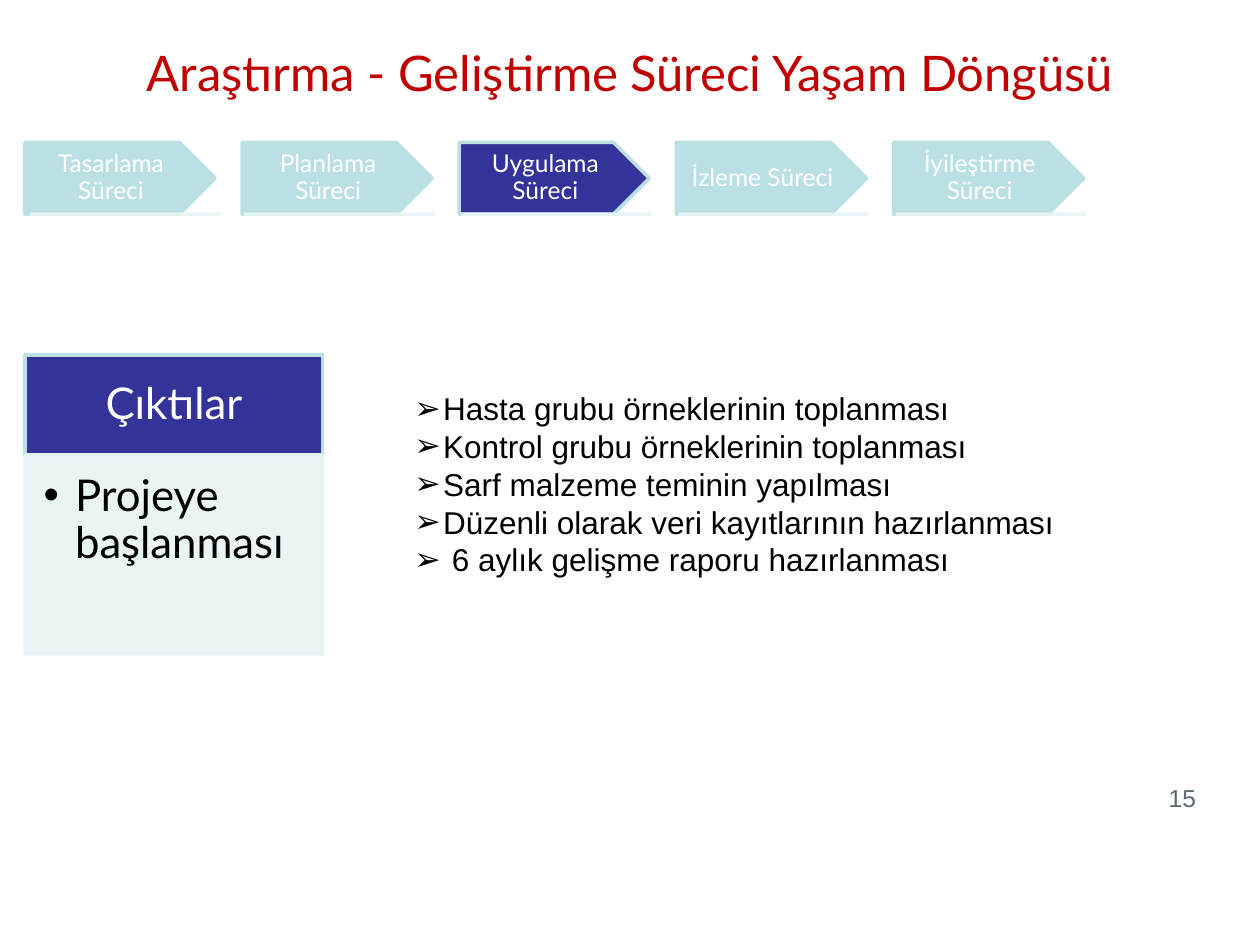
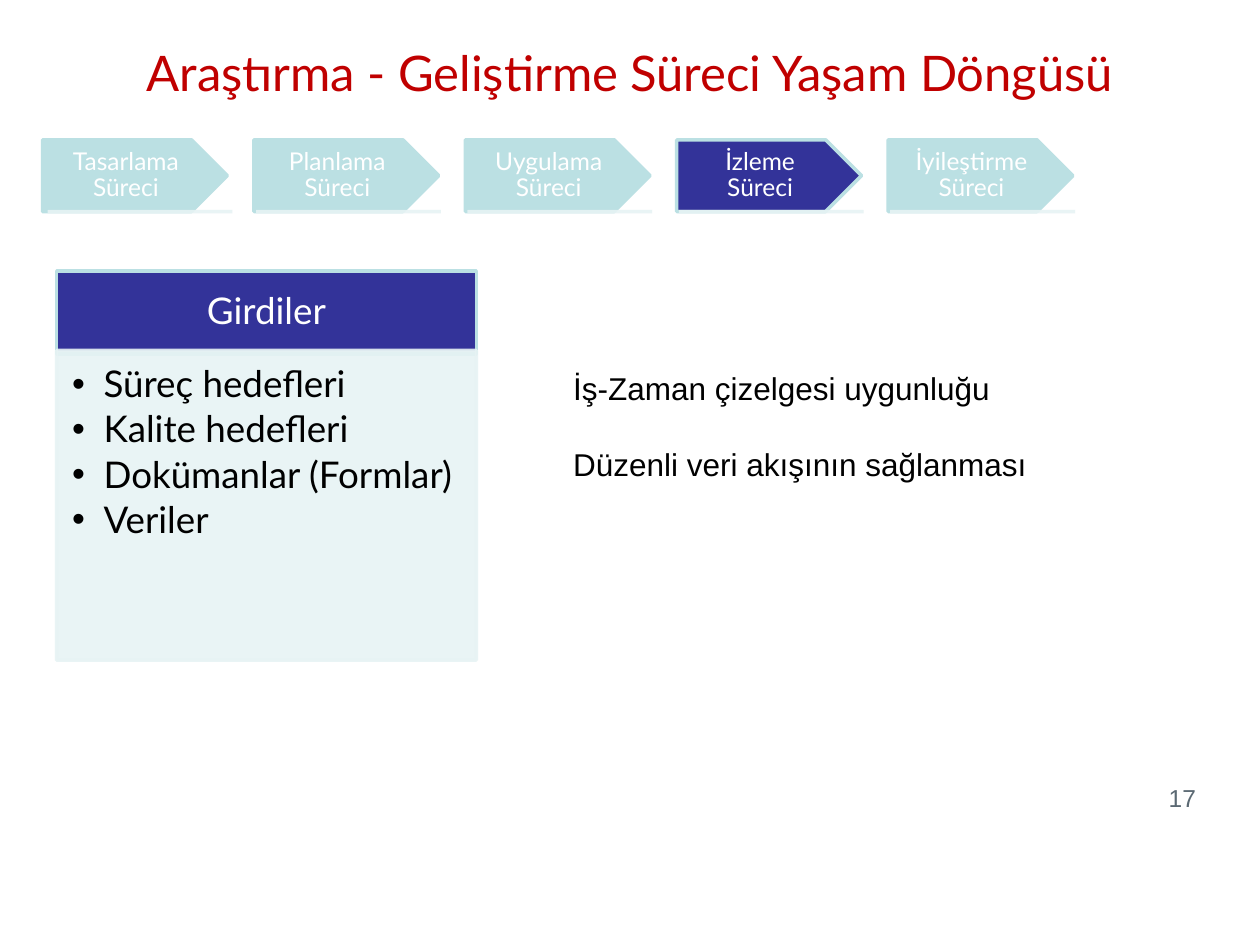
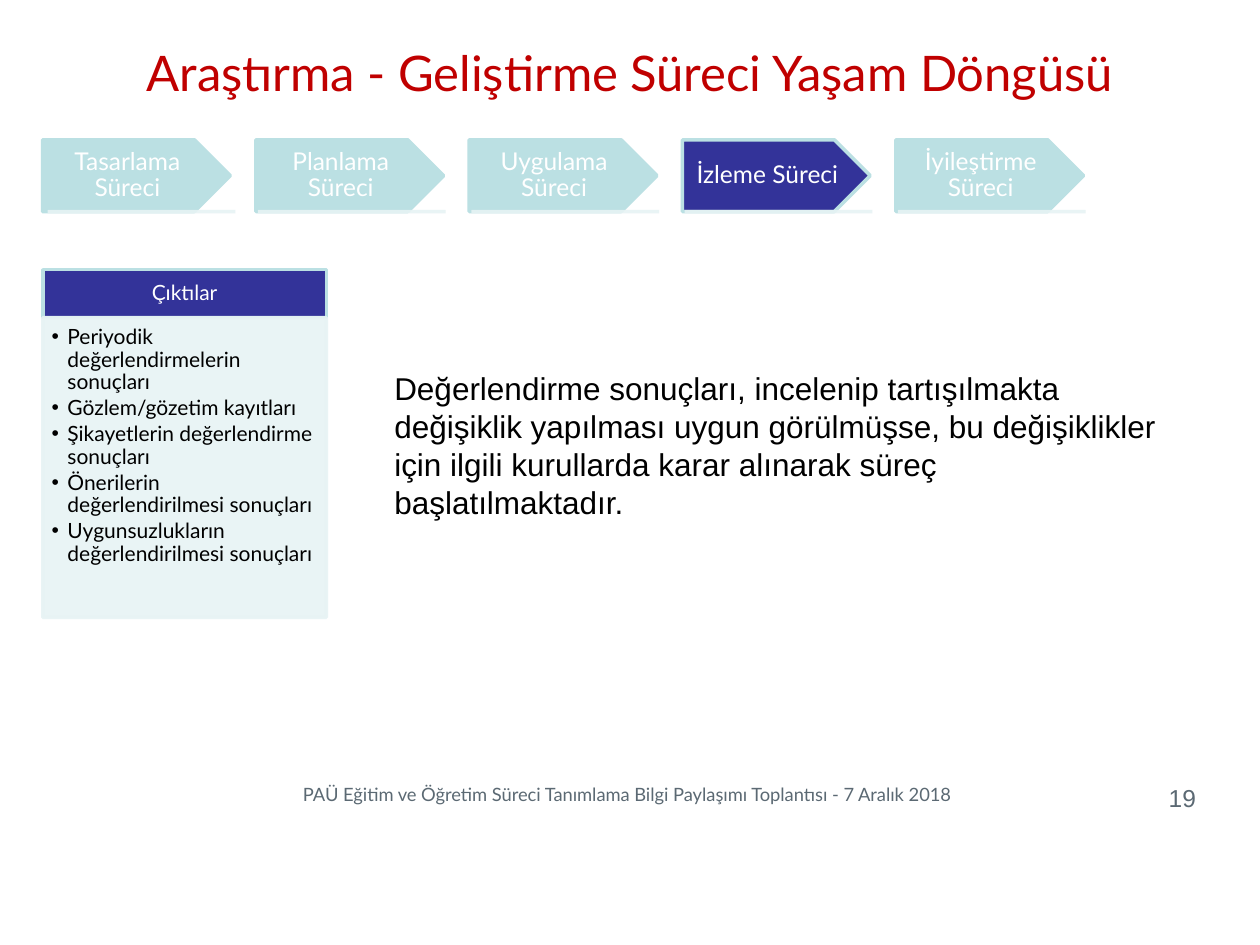
from lxml import etree
from pptx import Presentation
from pptx.dml.color import RGBColor
from pptx.enum.shapes import MSO_CONNECTOR, MSO_SHAPE
from pptx.enum.text import MSO_ANCHOR, PP_ALIGN
from pptx.oxml.ns import qn
from pptx.util import Pt

RED = RGBColor(0xC0, 0x00, 0x00)
NAVY = RGBColor(0x33, 0x33, 0x99)
TEAL = RGBColor(0xBB, 0xE0, 0xE3)
PALE = RGBColor(0xE7, 0xF3, 0xF4)
GRAY = RGBColor(0x5B, 0x69, 0x73)
WHITE = RGBColor(0xFF, 0xFF, 0xFF)
BLACK = RGBColor(0x00, 0x00, 0x00)

RECT, PLATE = MSO_SHAPE.RECTANGLE, MSO_SHAPE.PENTAGON
LINE = MSO_CONNECTOR.STRAIGHT
TOP, MID = MSO_ANCHOR.TOP, MSO_ANCHOR.MIDDLE
LEFT, CENTER, RIGHT = PP_ALIGN.LEFT, PP_ALIGN.CENTER, PP_ALIGN.RIGHT

HEAD, BODY = "Lato", "Arial"
TITLE = "Araştırma - Geliştirme Süreci Yaşam Döngüsü"
STEPS = ["Tasarlama Süreci", "Planlama Süreci", "Uygulama Süreci",
         "İzleme Süreci", "İyileştirme Süreci"]
STEP_H = 41
LEAD = 21.6  # line pitch of the body text


def fade(shape):
    """Make every colour of a shape 90% opaque."""
    for clr in shape._element.spPr.iter(qn("a:srgbClr")):
        etree.SubElement(clr, qn("a:alpha")).set("val", "90000")


def bullet(para, char, indent):
    props = para._p.get_or_add_pPr()
    props.set("marL", str(Pt(indent)))
    props.set("indent", str(-Pt(indent)))
    etree.SubElement(props, qn("a:buFont")).set("typeface", BODY)
    etree.SubElement(props, qn("a:buChar")).set("char", char)


def write(shape, lines, size, color, font=HEAD, align=LEFT, anchor=TOP):
    """Fill a shape with one paragraph per line and return the paragraphs."""
    frame = shape.text_frame
    frame.word_wrap = True
    frame.vertical_anchor = anchor
    frame.text = "\n".join(lines)
    for para in frame.paragraphs:
        para.alignment = align
        para.font.size = Pt(size)
        para.font.name = font
        para.font.color.rgb = color
    return frame.paragraphs


def pad(shape, *sides):
    frame = shape.text_frame
    (frame.margin_left, frame.margin_top,
     frame.margin_right, frame.margin_bottom) = map(Pt, sides)


def label(slide, box, lines, size, color, **style):
    return write(slide.shapes.add_textbox(*map(Pt, box)), lines, size, color, **style)


def block(slide, kind, box, fill, edge):
    shape = slide.shapes.add_shape(kind, *map(Pt, box))
    shape.shadow.inherit = False
    shape.fill.solid()
    shape.fill.fore_color.rgb = fill
    shape.line.color.rgb = edge
    shape.line.width = Pt(2)
    return shape


def banner(slide, kind, box, text, size, fill):
    """A filled shape with one centred white caption."""
    shape = block(slide, kind, box, fill, TEAL)
    pad(shape, *[0.56 * size, 0.32 * size] * 2)
    write(shape, [text], size, WHITE, align=CENTER, anchor=MID)[0].line_spacing = 0.9


def steps(slide, x, y, width, pitch, active):
    """The row of process arrows, each with a pale rule under it."""
    for n, name in enumerate(STEPS):
        left = x + n * pitch
        banner(slide, PLATE, (left, y, width, STEP_H), name, 14,
               NAVY if name == active else TEAL)
        start = left + (1.2 if n else 2.9)
        base = y + STEP_H
        rule = slide.shapes.add_connector(
            LINE, *map(Pt, (start, base, start + width, base)))
        rule.line.color.rgb = PALE
        rule.line.width = Pt(2)
        fade(rule)
        etree.SubElement(rule._element.spPr, qn("a:effectLst"))


def panel(slide, box, head, title, items, size, indent, lap=0):
    """A titled list; its body starts lap points above the foot of the head."""
    x, y, width, height = box
    banner(slide, RECT, (x, y, width, head), title, size, NAVY)
    skip = head - lap
    body = block(slide, RECT, (x, y + skip, width, height - skip), PALE, PALE)
    fade(body)
    pad(body, 0.42 * size, 0.42 * size, 0.56 * size, 0.63 * size)
    for para in write(body, items, size, BLACK):
        para.line_spacing = 0.9
        para.space_after = Pt(0.15 * size)
        bullet(para, "•", indent)


def notes(slide, box, lines, mark=None, gap=0):
    """The free text at the right of the panel."""
    for n, para in enumerate(label(slide, box, lines, 18, BLACK, font=BODY)):
        para.line_spacing = Pt(LEAD)
        para.space_before = Pt(gap if n else 0)
        if mark:
            bullet(para, mark, 16.5)


def page(deck, number):
    """A blank slide with the shared title and page number."""
    slide = deck.slides.add_slide(deck.slide_layouts[6])
    label(slide, (36, 21, 648, 90), [TITLE], 28, RED, align=CENTER)
    label(slide, (522.7, 444.2, 167.8, 21.6), [str(number)], 14, GRAY,
          font=BODY, align=RIGHT)
    return slide


def main():
    deck = Presentation()
    deck.slide_width, deck.slide_height = Pt(720), Pt(540)

    slide = page(deck, 15)
    steps(slide, 14.2, 81.4, 108.7, 124.1, "Uygulama Süreci")
    panel(slide, (14.4, 203, 170, 170.7), 57, "Çıktılar",
          ["Projeye başlanması"], 25, 18)
    notes(slide, (229.7, 218.9, 460, 116.6),
          ["Hasta grubu örneklerinin toplanması",
           "Kontrol grubu örneklerinin toplanması",
           "Sarf malzeme teminin yapılması",
           "Düzenli olarak veri kayıtlarının hazırlanması",
           " 6 aylık gelişme raporu hazırlanması"], mark="➢")

    slide = page(deck, 17)
    steps(slide, 24.3, 79.9, 105.6, 120.8, "İzleme Süreci")
    panel(slide, (32.4, 154.8, 239.8, 222.5), 47.5, "Girdiler",
          ["Süreç hedefleri", "Kalite hedefleri", "Dokümanlar (Formlar)",
           "Veriler"], 21, 18, lap=2)
    notes(slide, (320.4, 207.4, 370, 138.2),
          ["İş-Zaman çizelgesi uygunluğu",
           "Düzenli veri akışının sağlanması"], gap=LEAD)

    slide = page(deck, 19)
    panel(slide, (24.5, 154.1, 162, 198.7), 27.4, "Çıktılar",
          ["Periyodik değerlendirmelerin sonuçları",
           "Gözlem/gözetim kayıtları",
           "Şikayetlerin değerlendirme sonuçları",
           "Önerilerin değerlendirilmesi sonuçları",
           "Uygunsuzlukların değerlendirilmesi sonuçları"], 12, 9)
    steps(slide, 24.3, 79.9, 107.3, 121.9, "İzleme Süreci")
    notes(slide, (218.2, 207.4, 452.9, 94.3),
          ["Değerlendirme sonuçları, incelenip tartışılmakta değişiklik "
           "yapılması uygun görülmüşse, bu değişiklikler için ilgili "
           "kurullarda karar alınarak süreç başlatılmaktadır."])
    label(slide, (82.8, 444.2, 551.5, 21.6),
          ["PAÜ Eğitim ve Öğretim Süreci Tanımlama Bilgi Paylaşımı "
           "Toplantısı - 7 Aralık 2018"], 10.5, GRAY, align=CENTER)

    deck.save("out.pptx")


if __name__ == "__main__":
    main()
